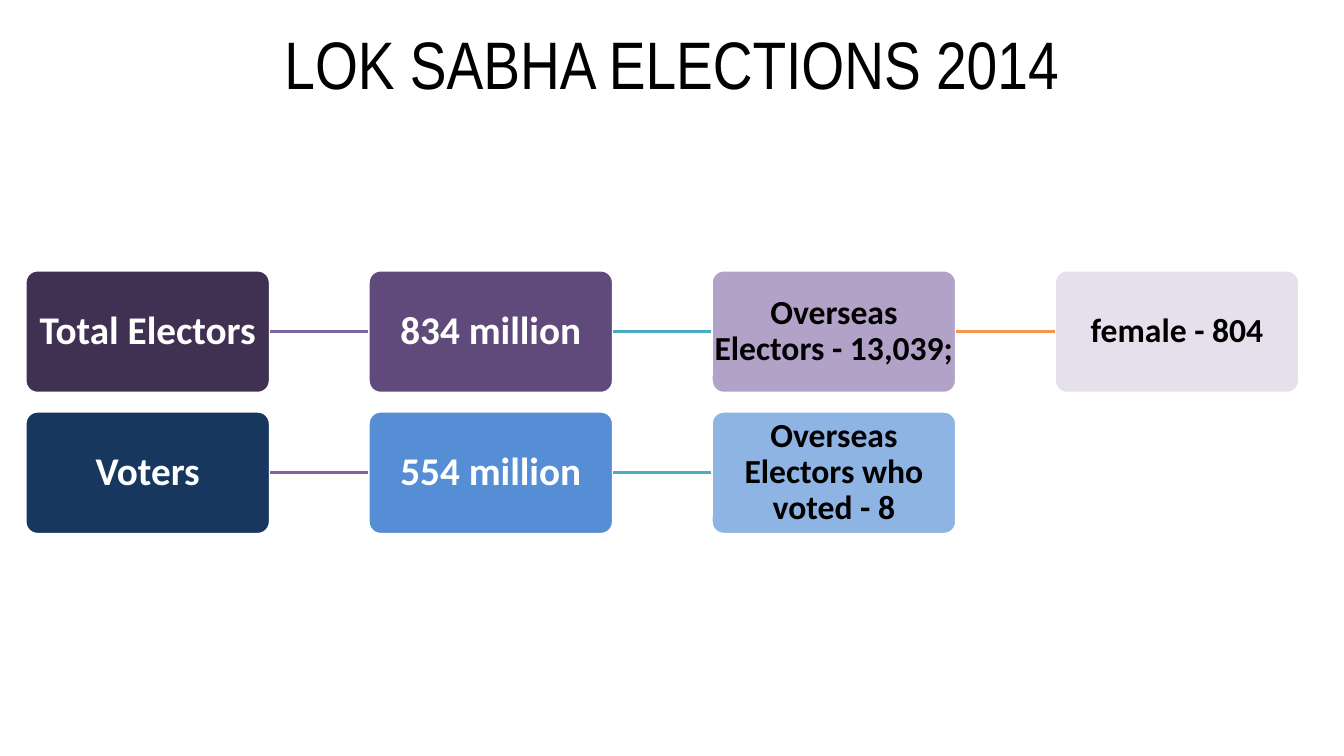
from lxml.etree import SubElement
from pptx import Presentation
from pptx.dml.color import RGBColor
from pptx.enum.shapes import MSO_CONNECTOR, MSO_SHAPE
from pptx.enum.text import MSO_ANCHOR, PP_ALIGN
from pptx.oxml.ns import qn
from pptx.util import Inches, Pt

SLIDE_WIDTH, SLIDE_HEIGHT = 13.33, 7.5
BOX_WIDTH, BOX_HEIGHT = 2.43, 1.22
COLUMN_STEP, ROW_STEP = 3.403, 1.4
TOP_SIDE, LEFT_SIDE, BOTTOM_SIDE, RIGHT_SIDE = range(4)

WHITE, BLACK = "FFFFFF", "000000"
LINK_COLORS = ["8064A2", "4BACC6", "F79646"]
# Text size and colour of each column
COLUMN_STYLES = [(28, WHITE), (28, WHITE), (24, BLACK), (24, BLACK)]
# Label and fill of each box, row by row
ROWS = [
    [("Total Electors", "403152"), ("834 million", "604A7B"),
     ("Overseas Electors - 13,039;", "B3A2C7"), ("female - 804", "E6E0EC")],
    [("Voters", "17375E"), ("554 million", "558ED5"),
     ("Overseas Electors who voted - 8", "8EB4E3")],
]


def color(hex_string):
    return RGBColor.from_string(hex_string)


def add_text(slide, box, text, size, font_name, hex_string, bold=False, inset=0.02):
    text_box = slide.shapes.add_textbox(*map(Inches, box))
    text_frame = text_box.text_frame
    text_frame.word_wrap = True
    text_frame.vertical_anchor = MSO_ANCHOR.MIDDLE
    text_frame.margin_left = text_frame.margin_right = Inches(inset)
    text_frame.margin_top = text_frame.margin_bottom = Inches(inset)
    text_frame.text = text
    paragraph = text_frame.paragraphs[0]
    paragraph.alignment = PP_ALIGN.CENTER
    font = paragraph.runs[0].font
    font.name, font.size, font.bold = font_name, Pt(size), bold
    font.color.rgb = color(hex_string)
    return paragraph


def add_node(slide, box, label, fill, size, text_color):
    """Draw a rounded box with its label and return the box."""
    node = slide.shapes.add_shape(MSO_SHAPE.ROUNDED_RECTANGLE, *map(Inches, box))
    node.adjustments[0] = 0.1
    node.shadow.inherit = False
    node.fill.solid()
    node.fill.fore_color.rgb = color(fill)
    node.line.color.rgb = color(WHITE)
    node.line.width = Pt(2)
    paragraph = add_text(slide, box, label, size, "Calibri", text_color, bold=True)
    paragraph.line_spacing = 0.9
    return node


def add_link(slide, start, end, hex_string):
    link = slide.shapes.add_connector(MSO_CONNECTOR.STRAIGHT, 0, 0, 0, 0)
    link.begin_connect(start, RIGHT_SIDE)
    link.end_connect(end, LEFT_SIDE)
    link.line.color.rgb = color(hex_string)
    link.line.width = Pt(2)
    SubElement(link._element.spPr, qn("a:effectLst"))


def add_chain(slide, left, top, row):
    """Draw one row of boxes, each linked to the one before it."""
    previous = None
    for column, ((label, fill), style) in enumerate(zip(row, COLUMN_STYLES)):
        box = (left + column * COLUMN_STEP, top, BOX_WIDTH, BOX_HEIGHT)
        node = add_node(slide, box, label, fill, *style)
        if previous is not None:
            add_link(slide, previous, node, LINK_COLORS[column - 1])
        previous = node


def add_election_slide(presentation):
    slide = presentation.slides.add_slide(presentation.slide_layouts[6])
    title_box = (SLIDE_WIDTH * 0.05, 0, SLIDE_WIDTH * 0.9, SLIDE_HEIGHT / 6)
    add_text(slide, title_box, "LOK SABHA ELECTIONS 2014", 48, "Arial Narrow",
             BLACK, inset=0.1)
    for index, row in enumerate(ROWS):
        add_chain(slide, 0.25, 2.68 + index * ROW_STEP, row)


def main():
    presentation = Presentation()
    presentation.slide_width = Inches(SLIDE_WIDTH)
    presentation.slide_height = Inches(SLIDE_HEIGHT)
    add_election_slide(presentation)
    presentation.save("out.pptx")


if __name__ == "__main__":
    main()
